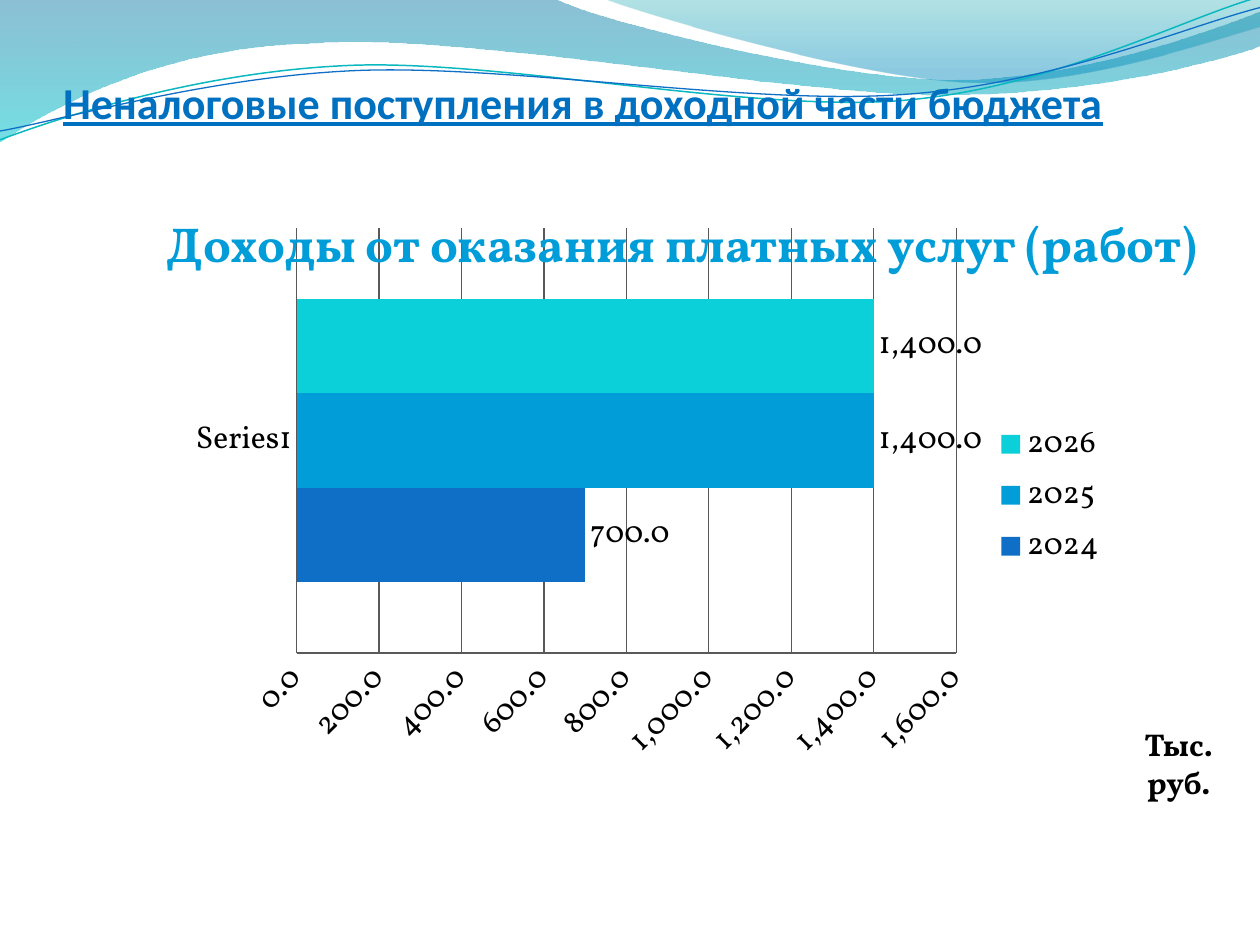
from math import cos, radians, sin
from lxml import etree
from pptx import Presentation, util as u
from pptx.chart.data import CategoryChartData
from pptx.dml.color import RGBColor
from pptx.enum import chart as ch, text as tx
from pptx.oxml.ns import qn

BLUE = RGBColor(0x0F, 0x6F, 0xC6)
SKY = RGBColor(0x00, 0x9D, 0xD9)
TEAL = RGBColor(0x0B, 0xD0, 0xD9)
LINK = RGBColor(0x00, 0x70, 0xC0)
BLACK = RGBColor(0, 0, 0)
GREY = RGBColor(0x59, 0x59, 0x59)
AQUA = RGBColor(0x0A, 0xB8, 0xBF)
DEEP = RGBColor(0x00, 0x74, 0xA1)
CYAN = RGBColor(0x00, 0xC6, 0xCF)
PINE = RGBColor(0x00, 0xA1, 0xA9)
LAKE = RGBColor(0x00, 0x8B, 0xBF)
INCH = 2.54
TILT = -2.7

BAND = [(0, 0), (4.4, -0.01),
        (4.76, 0.17, 6.64, 0.63, 7.58, 0.63), (8.53, 0.63, 9.58, 0.26, 10, 0.09),
        (10.01, 0.36), (9.83, 0.44, 8.7, 0.76, 7.46, 0.75),
        (6.22, 0.75, 3.82, 0.28, 2.57, 0.34), (1.29, 0.36, 0.46, 0.83, -0.01, 1.13),
        (0, 0)]
CREST = [(4.79, -0.01), (5.09, 0.11, 6.82, 0.62, 7.69, 0.65),
         (8.56, 0.69, 9.61, 0.32, 10, 0.21), (10, 0), (4.79, -0.01)]
UPPER = [(0, 1.11), (0.48, 0.93, 1.58, 0.57, 2.77, 0.52),
         (3.95, 0.47, 5.93, 0.89, 7.13, 0.8), (8.33, 0.71, 9.38, 0.15, 9.98, -0.02)]
LOWER = [(0, 1.04), (0.47, 0.96, 1.64, 0.61, 2.83, 0.56),
         (4.03, 0.51, 5.97, 0.84, 7.17, 0.75), (8.36, 0.67, 9.41, 0.21, 10, 0.06)]


def local(x, y, box, turn):
    left, top, wide, high = box
    dx, dy = x - left - wide / 2, y - top - high / 2
    c, s = cos(radians(-turn)), sin(radians(-turn))
    return (u.Cm((dx * c - dy * s + wide / 2) * INCH),
            u.Cm((dx * s + dy * c + high / 2) * INCH))


def bend(track, route, box, turn):
    for old in list(track):
        track.remove(old)
    track.set("w", str(u.Cm(box[2] * INCH)))
    track.set("h", str(u.Cm(box[3] * INCH)))
    for i, leg in enumerate(route):
        tag = "a:moveTo" if i == 0 else "a:lnTo" if len(leg) == 2 else "a:cubicBezTo"
        step = etree.SubElement(track, qn(tag))
        for x, y in zip(leg[::2], leg[1::2]):
            px, py = local(x, y, box, turn)
            etree.SubElement(step, qn("a:pt"), x=str(px), y=str(py))
    if route[0] == route[-1]:
        etree.SubElement(track, qn("a:close"))


def write(frame, words, size=18, face="Vollkorn", color=BLACK, bold=True,
          line=False, align=tx.PP_ALIGN.CENTER, indent=0):
    frame.word_wrap = True
    frame.auto_size = tx.MSO_AUTO_SIZE.NONE
    par = frame.paragraphs[0]
    par.alignment = align
    if indent:
        par._p.get_or_add_pPr().set("marL", str(u.Cm(indent)))
    run = par.add_run()
    run.text = words
    font = run.font
    font.size, font.name = u.Pt(size), face
    font.bold, font.underline = bold, line
    font.color.rgb = color


class Deck:
    def __init__(self):
        self.prs = Presentation()
        self.prs.slide_width, self.prs.slide_height = u.Cm(25.4), u.Cm(19.05)
        self.page = self.prs.slides.add_slide(self.prs.slide_layouts[5])
        self.items = self.page.shapes
        self.face, self.size = "Vollkorn", 18

    def shape(self, route, box, turn=0):
        form = self.items.build_freeform(0, 0)
        form.add_line_segments([(100, 100)], close=False)
        item = form.convert_to_shape()
        item.left, item.top, item.width, item.height = (u.Cm(v * INCH) for v in box)
        item.rotation = turn
        item.shadow.inherit = False
        bend(next(item._element.iter(qn("a:path"))), route, box, turn)
        return item

    def wave(self, route, box, stops):
        item = self.shape(route, box)
        item.line.fill.background()
        item.fill.gradient()
        item.fill.gradient_angle = 270
        for stop, (place, color, alpha) in zip(item.fill.gradient_stops, stops):
            stop.position = place
            stop.color.rgb = color
        marks = item._element.spPr.iter(qn("a:srgbClr"))
        for mark, (place, color, alpha) in zip(list(marks), stops):
            etree.SubElement(mark, qn("a:alpha")).set("val", str(alpha * 1000))

    def curve(self, route, box, color, width):
        item = self.shape(route, box, TILT)
        item.fill.background()
        item.line.color.rgb = color
        item.line.width = u.Pt(width)

    def title(self, words, box, **style):
        head = self.items.title
        head.left, head.top, head.width, head.height = map(u.Cm, box)
        frame = head.text_frame
        frame.vertical_anchor = tx.MSO_ANCHOR.BOTTOM
        frame.margin_left = frame.margin_right = frame.margin_bottom = 0
        frame.margin_top = u.Cm(0.13)
        write(frame, words, **style)
        self.items._spTree.append(head._element)

    def label(self, words, box, **style):
        item = self.items.add_textbox(*map(u.Cm, box))
        write(item.text_frame, words, face=self.face, indent=0.3, **style)

    def bars(self, box, rows):
        data = CategoryChartData(number_format="#,##0.0")
        data.categories = [""]
        for name, value, color in rows:
            data.add_series(name, [value])
        kind = ch.XL_CHART_TYPE.BAR_CLUSTERED
        chart = self.items.add_chart(kind, *map(u.Cm, box), data).chart
        chart.has_title = False
        chart.font.size, chart.font.name = u.Pt(self.size), self.face
        chart.font.color.rgb = BLACK
        chart.has_legend = True
        chart.legend.position = ch.XL_LEGEND_POSITION.RIGHT
        chart.legend.include_in_layout = False
        plot = chart.plots[0]
        plot.gap_width, plot.overlap = 150, 0
        plot.vary_by_categories = False
        for bar, (name, value, color) in zip(plot.series, rows):
            bar.format.fill.solid()
            bar.format.fill.fore_color.rgb = color
            tags = bar.data_labels
            tags.show_value = True
            tags.number_format = "#,##0.0"
            tags.number_format_is_linked = False
            tags.position = ch.XL_LABEL_POSITION.OUTSIDE_END
        for axis in (chart.category_axis, chart.value_axis):
            axis.major_tick_mark = axis.minor_tick_mark = ch.XL_TICK_MARK.NONE
            axis.format.line.color.rgb = GREY
        axis = chart.value_axis
        axis.has_major_gridlines = True
        axis.major_gridlines.format.line.color.rgb = GREY
        axis.minimum_scale, axis.maximum_scale, axis.major_unit = 0, 1600, 200
        axis.tick_labels.number_format = "#,##0.0"
        axis.tick_labels.number_format_is_linked = False


def main():
    deck = Deck()
    deck.wave(BAND, (-0.01, -0.01, 10.02, 1.14), [(0, DEEP, 45), (1, CYAN, 55)])
    deck.wave(CREST, (4.79, -0.01, 5.21, 0.7), [(0, PINE, 30), (0.8, LAKE, 45)])
    deck.curve(UPPER, (-0.02, 0.22, 10.02, 0.71), AQUA, 0.85)
    deck.curve(LOWER, (-0.02, 0.3, 10.03, 0.58), BLUE, 0.75)
    deck.title("Неналоговые поступления в доходной части бюджета",
               (1.27, 1.19, 23.06, 1.4), size=25.2, face="Calibri", color=LINK,
               line=True, align=tx.PP_ALIGN.LEFT)
    deck.bars((3.57, 4.37, 19, 11.23),
              [("2024", 700, BLUE), ("2025", 1400, SKY), ("2026", 1400, TEAL)])
    deck.label("Доходы от оказания платных услуг (работ)",
               (2.39, 4.17, 22.4, 1.45), size=28, color=SKY)
    deck.label("Тыс. руб.", (21.82, 14.49, 3.58, 1.02))
    deck.prs.save("out.pptx")


if __name__ == "__main__":
    main()
